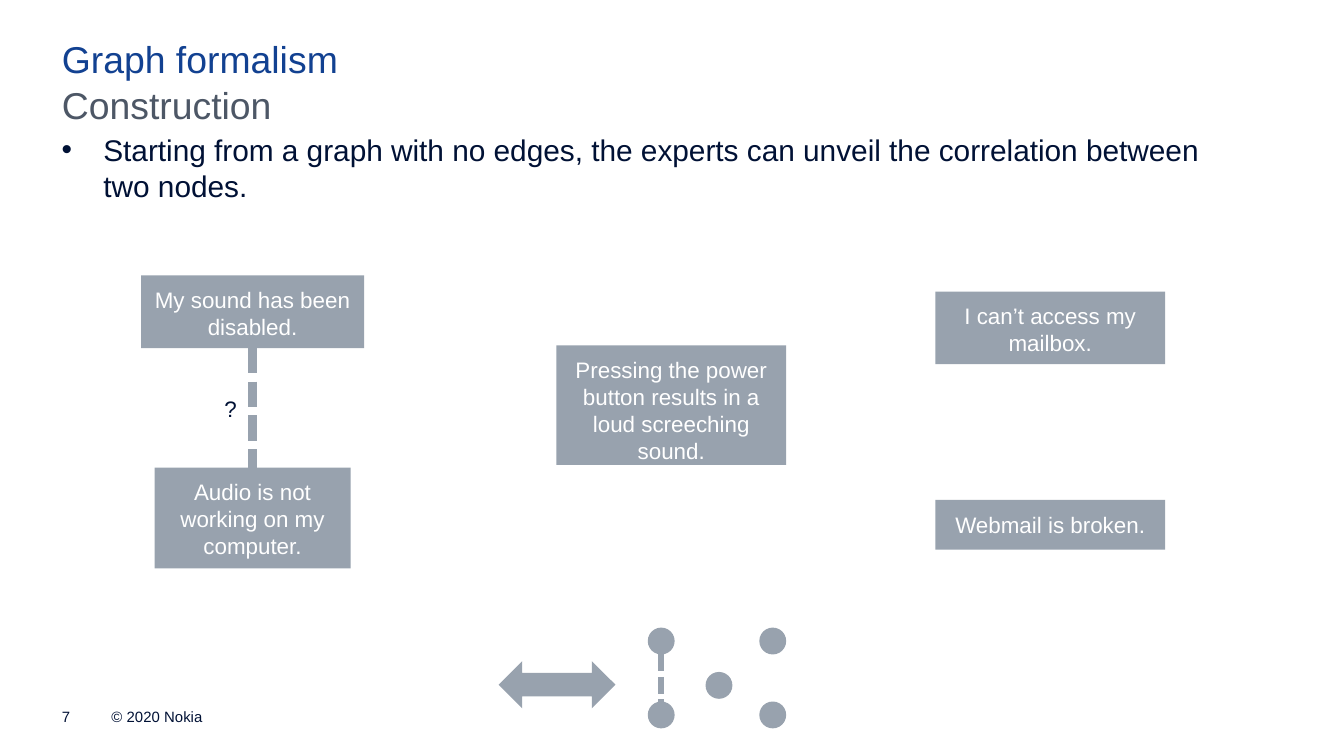
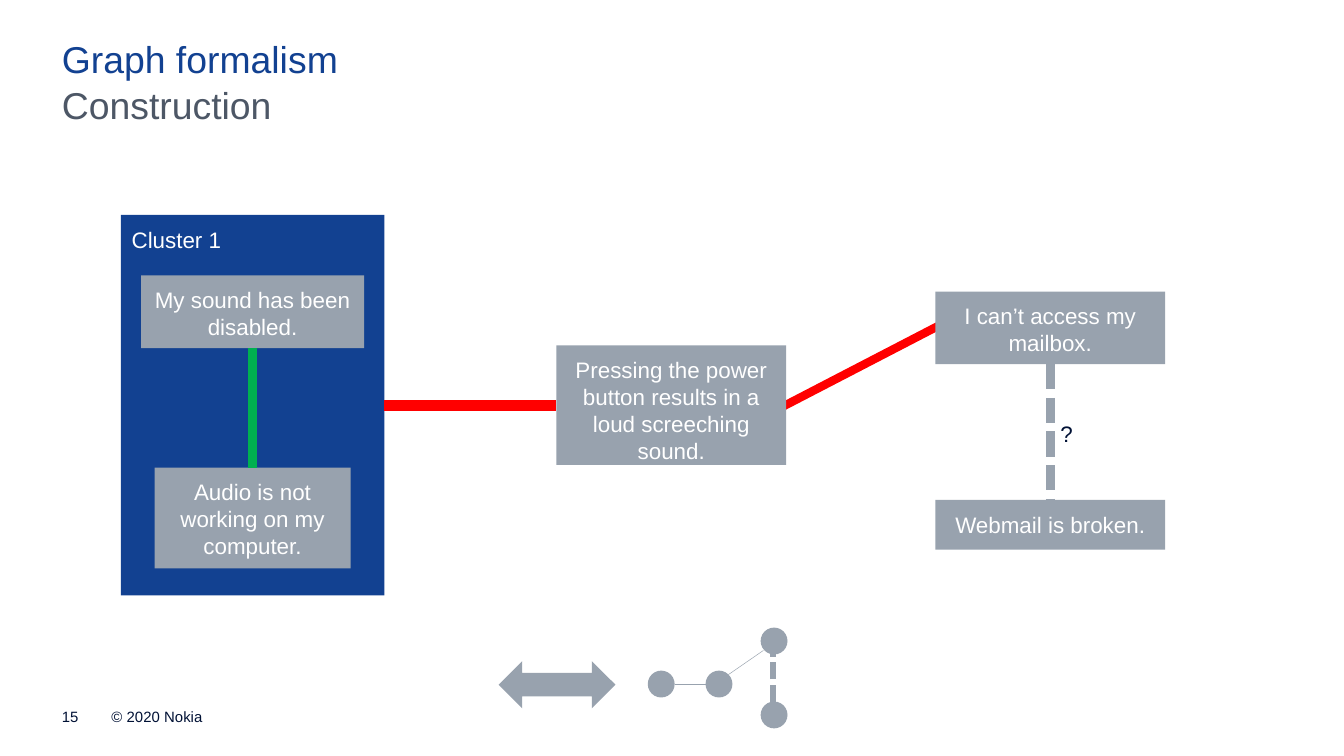
from dataclasses import dataclass
from typing import Optional

from lxml.etree import SubElement
from pptx import Presentation
from pptx.dml.color import RGBColor
from pptx.enum.dml import MSO_LINE
from pptx.enum.shapes import MSO_CONNECTOR, MSO_SHAPE
from pptx.enum.text import MSO_ANCHOR, PP_ALIGN
from pptx.oxml.ns import qn
from pptx.shapes.autoshape import Shape
from pptx.shapes.connector import Connector
from pptx.slide import Slide
from pptx.text.text import TextFrame
from pptx.util import Inches, Pt

COLORS = {
    "blue": "124191",
    "slate": "4D5766",
    "navy": "001135",
    "gray": "98A2AE",
    "white": "FFFFFF",
    "red": "FF0000",
    "green": "00B050",
}
FONT = "Arial"
PADDING = 0.08
DOT_SIZE = 0.2
TOP, LEFT, BOTTOM, RIGHT = range(4)


@dataclass(frozen=True)
class Area:
    left: float
    top: float
    width: float
    height: float

    def lengths(self) -> list[Inches]:
        return [Inches(v) for v in (self.left, self.top, self.width, self.height)]


@dataclass(frozen=True)
class Node:
    text: str
    area: Area
    color: str = "gray"
    align: PP_ALIGN = PP_ALIGN.CENTER


@dataclass(frozen=True)
class Style:
    color: str
    width: float
    dashed: bool = False


NODES = {
    "audio": Node("Audio is not working on my computer.", Area(1.15, 3.48, 1.46, 0.75)),
    "sound": Node("My sound has been disabled.", Area(1.05, 2.05, 1.66, 0.54)),
    "power": Node("Pressing the power button results in a loud screeching sound.",
                  Area(4.14, 2.57, 1.71, 0.89)),
    "mailbox": Node("I can’t access my mailbox.", Area(6.96, 2.17, 1.71, 0.54)),
    "webmail": Node("Webmail is broken.", Area(6.96, 3.72, 1.71, 0.37)),
}
CLUSTER = Node("Cluster 1", Area(0.9, 1.6, 1.96, 2.83), "blue", PP_ALIGN.LEFT)

UNKNOWN = Style("gray", 4.5, dashed=True)
RELATED = Style("green", 4.5)
UNRELATED = Style("red", 4.5)
UNRELATED_CLUSTER = Style("red", 6)
DOT_UNKNOWN = Style("gray", 3, dashed=True)
DOT_KNOWN = Style("gray", 0.25)


def rgb(name: str) -> RGBColor:
    return RGBColor.from_string(COLORS[name])


def write(frame: TextFrame, text: str, size: float, color: str, padding: float = 0,
          align: PP_ALIGN = PP_ALIGN.LEFT, after: float = 0,
          spacing: Optional[float] = None, bullet: bool = False) -> None:
    frame.margin_left = frame.margin_right = Inches(padding)
    frame.margin_top = frame.margin_bottom = Inches(padding)
    para = frame.paragraphs[0]
    para.text = text
    if bullet:
        props = para._p.get_or_add_pPr()
        props.set("marL", str(Inches(0.31)))
        props.set("indent", str(Inches(-0.31)))
        SubElement(props, qn("a:buFont")).set("typeface", FONT)
        SubElement(props, qn("a:buChar")).set("char", "•")
    para.alignment = align
    para.space_after = Pt(after)
    if spacing:
        para.line_spacing = spacing
    para.font.name = FONT
    para.font.size = Pt(size)
    para.font.color.rgb = rgb(color)


def add_text(page: Slide, area: Area, text: str, size: float, color: str,
             anchor: MSO_ANCHOR = MSO_ANCHOR.TOP, wrap: bool = True, **options) -> None:
    frame = page.shapes.add_textbox(*area.lengths()).text_frame
    frame.word_wrap = wrap
    frame.vertical_anchor = anchor
    write(frame, text, size, color, **options)


def add_filled(page: Slide, kind: MSO_SHAPE, area: Area, color: str = "gray") -> Shape:
    shape = page.shapes.add_shape(kind, *area.lengths())
    shape.shadow.inherit = False
    shape.fill.solid()
    shape.fill.fore_color.rgb = rgb(color)
    shape.line.fill.background()
    return shape


def add_node(page: Slide, node: Node) -> Shape:
    box = add_filled(page, MSO_SHAPE.RECTANGLE, node.area, node.color)
    box.text_frame.word_wrap = True
    box.text_frame.vertical_anchor = MSO_ANCHOR.TOP
    write(box.text_frame, node.text, 12, "white", PADDING, node.align, after=3)
    return box


def add_nodes(page: Slide) -> dict[str, Shape]:
    return {name: add_node(page, node) for name, node in NODES.items()}


def add_line(page: Slide, style: Style, x1: float = 0, y1: float = 0,
             x2: float = 0, y2: float = 0) -> Connector:
    line = page.shapes.add_connector(
        MSO_CONNECTOR.STRAIGHT, Inches(x1), Inches(y1), Inches(x2), Inches(y2))
    line.line.color.rgb = rgb(style.color)
    line.line.width = Pt(style.width)
    if style.dashed:
        line.line.dash_style = MSO_LINE.SQUARE_DOT
        line.line._ln.find(qn("a:prstDash")).set("val", "sysDash")
    SubElement(line._element.spPr, qn("a:effectLst"))
    return line


def join(page: Slide, style: Style, start: Shape, start_side: int,
         end: Shape, end_side: int) -> None:
    line = add_line(page, style)
    line.begin_connect(start, start_side)
    line.end_connect(end, end_side)


def add_question(page: Slide, left: float, top: float) -> None:
    add_text(page, Area(left, top, 0.22, 0.34), "?", 12, "navy",
             wrap=False, padding=PADDING, after=3)


def add_small_graph(page: Slide, dots: list[tuple[float, float]]) -> None:
    add_filled(page, MSO_SHAPE.LEFT_RIGHT_ARROW, Area(3.71, 4.92, 0.87, 0.35))
    for left, top in dots:
        add_filled(page, MSO_SHAPE.OVAL, Area(left, top, DOT_SIZE, DOT_SIZE))


def add_page(deck: Presentation, number: int) -> Slide:
    page = deck.slides.add_slide(deck.slide_layouts[6])
    # Footer
    for left, width, text in ((0.83, 1.97, "© 2020 Nokia"), (0.46, 0.28, str(number))):
        add_text(page, Area(left, 5.27, width, 0.13), text, 8, "navy", MSO_ANCHOR.BOTTOM)
    # Title and subtitle
    for top, text, color in ((0.31, "Graph formalism", "blue"),
                             (0.65, "Construction", "slate")):
        add_text(page, Area(0.46, top, 9.09, 0.34), text, 20, color, spacing=0.9)
    return page


def build_first_question(deck: Presentation) -> None:
    page = add_page(deck, 7)
    add_text(page, Area(0.46, 0.98, 8.63, 4.13),
             "Starting from a graph with no edges, the experts can unveil "
             "the correlation between two nodes.",
             16, "navy", after=6, bullet=True)
    # Sentences and the edge in question
    boxes = add_nodes(page)
    join(page, UNKNOWN, boxes["sound"], BOTTOM, boxes["audio"], TOP)
    add_question(page, 1.59, 2.86)
    # Small graph
    add_small_graph(page, [(4.82, 4.67), (4.82, 5.22), (5.25, 5),
                           (5.65, 4.67), (5.65, 5.22)])
    add_line(page, DOT_UNKNOWN, 4.92, 4.87, 4.92, 5.22)


def build_cluster_question(deck: Presentation) -> None:
    page = add_page(deck, 15)
    # Sentences, with the slanted edge tucked behind them
    add_line(page, UNRELATED, 7.03, 2.4, 5.7, 3.09)
    cluster = add_node(page, CLUSTER)
    boxes = add_nodes(page)
    # Known edges and the edge in question
    join(page, UNRELATED_CLUSTER, cluster, RIGHT, boxes["power"], LEFT)
    join(page, RELATED, boxes["sound"], BOTTOM, boxes["audio"], TOP)
    join(page, UNKNOWN, boxes["mailbox"], BOTTOM, boxes["webmail"], TOP)
    add_question(page, 7.81, 3.05)
    # Small graph
    add_small_graph(page, [(4.82, 4.99), (5.25, 4.99), (5.66, 4.67), (5.66, 5.22)])
    add_line(page, DOT_KNOWN, 5.02, 5.09, 5.25, 5.09)
    add_line(page, DOT_KNOWN, 5.68, 4.84, 5.42, 5.02)
    add_line(page, DOT_UNKNOWN, 5.75, 5.22, 5.75, 4.87)


def main() -> None:
    deck = Presentation()
    # Widescreen, 16:9
    deck.slide_width = Inches(10)
    deck.slide_height = Inches(10 * 9 / 16)
    build_first_question(deck)
    build_cluster_question(deck)
    deck.save("out.pptx")


if __name__ == "__main__":
    main()
